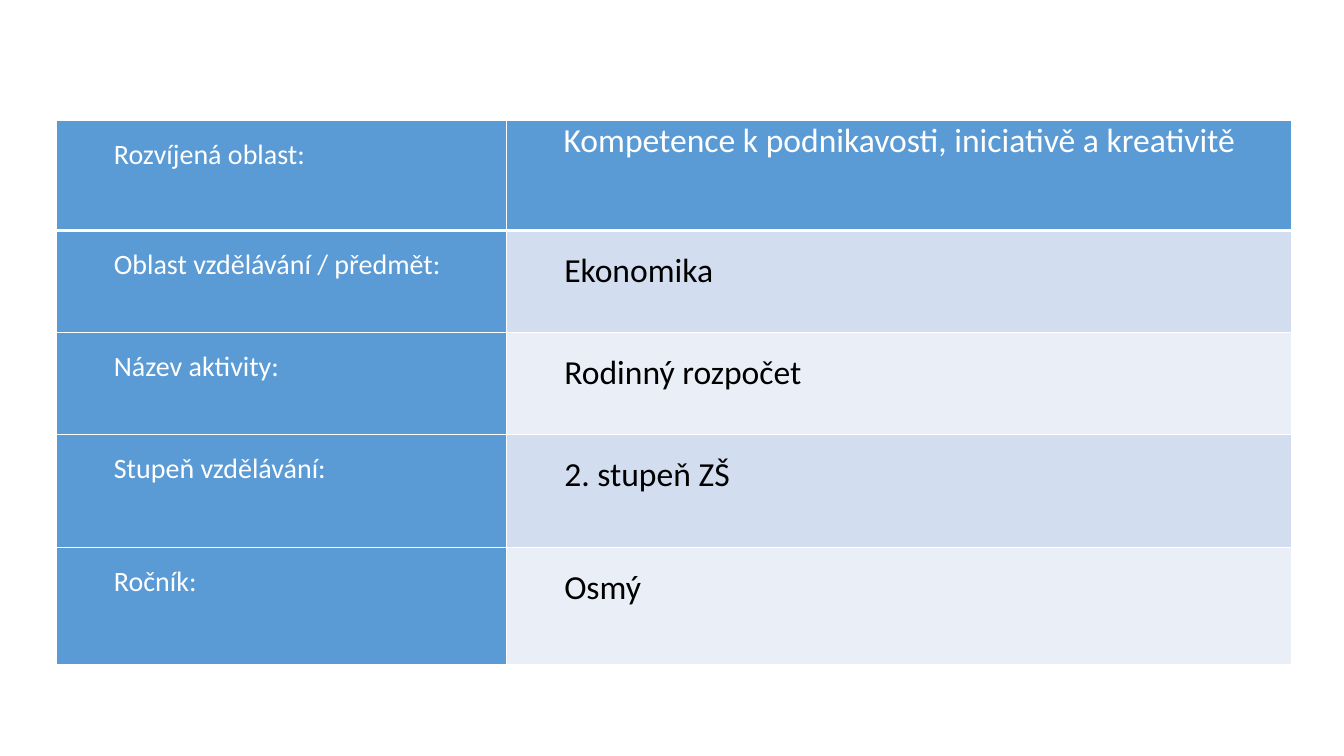
from lxml.etree import SubElement
from pptx import Presentation
from pptx.dml.color import RGBColor
from pptx.enum.text import PP_ALIGN as Align
from pptx.oxml.ns import qn
from pptx.util import Cm, Pt

WHITE, BLACK, BLUE = "FFFFFF", "000000", "5B9BD5"
BANDS = ["D2DEEF", "EAEFF7"]
COLUMN_WIDTHS = [11.35, 19.79]
ROW_HEIGHTS = [2.77, 2.57, 2.57, 2.84, 2.95]
ACTIVITY = [
    ("Rozvíjená oblast:", "Kompetence k podnikavosti, iniciativě a kreativitě"),
    ("Oblast vzdělávání / předmět:", "Ekonomika"),
    ("Název aktivity:", "Rodinný rozpočet"),
    ("Stupeň vzdělávání:", "2. stupeň ZŠ"),
    ("Ročník:", "Osmý"),
]


def color(value):
    return RGBColor.from_string(value)


def set_borders(cell, bottom_width):
    properties = cell._tc.get_or_add_tcPr()
    for side, width in (("L", 1), ("R", 1), ("T", 1), ("B", bottom_width)):
        line = SubElement(properties, qn(f"a:ln{side}"), w=str(Pt(width)))
        fill = SubElement(line, qn("a:solidFill"))
        SubElement(fill, qn("a:srgbClr"), val=WHITE)


def write_cell(cell, text, size, text_color, fill_color, is_heading, is_header_row):
    set_borders(cell, 3 if is_header_row else 1)
    cell.fill.solid()
    cell.fill.fore_color.rgb = color(fill_color)
    cell.margin_left = cell.margin_right = Cm(0.18)
    cell.margin_top = cell.margin_bottom = 0
    para = cell.text_frame.paragraphs[0]
    if is_heading:
        para.alignment = Align.CENTER
    else:
        para.line_spacing = 1.5
        properties = para._p.get_or_add_pPr()
        properties.set("marL", str(Cm(1.27)))
        properties.set("indent", "0")
    span = para.add_run()
    span.text = text
    span.font.name = "Calibri"
    span.font.size = Pt(size)
    span.font.bold = False
    span.font.color.rgb = color(text_color)


def add_activity_table(page, left, top, width, height):
    frame = page.shapes.add_table(len(ACTIVITY), 2, left, top, width, height)
    table = frame.table
    for column, column_width in zip(table.columns, COLUMN_WIDTHS):
        column.width = int(width * column_width / sum(COLUMN_WIDTHS))
    for row, row_height in zip(table.rows, ROW_HEIGHTS):
        row.height = int(height * row_height / sum(ROW_HEIGHTS))
    for index, (label, value) in enumerate(ACTIVITY):
        header = index == 0
        value_color = WHITE if header else BLACK
        value_fill = BLUE if header else BANDS[(index - 1) % 2]
        write_cell(table.cell(index, 0), label, 20, WHITE, BLUE, False, header)
        write_cell(table.cell(index, 1), value, 24, value_color, value_fill, header, header)


def main():
    deck = Presentation()
    deck.slide_width, deck.slide_height = Cm(33.87), Cm(19.05)
    page = deck.slides.add_slide(deck.slide_layouts[6])
    add_activity_table(page, Cm(1.42), Cm(3.04), Cm(31.14), Cm(13.7))
    deck.save("out.pptx")


if __name__ == "__main__":
    main()
